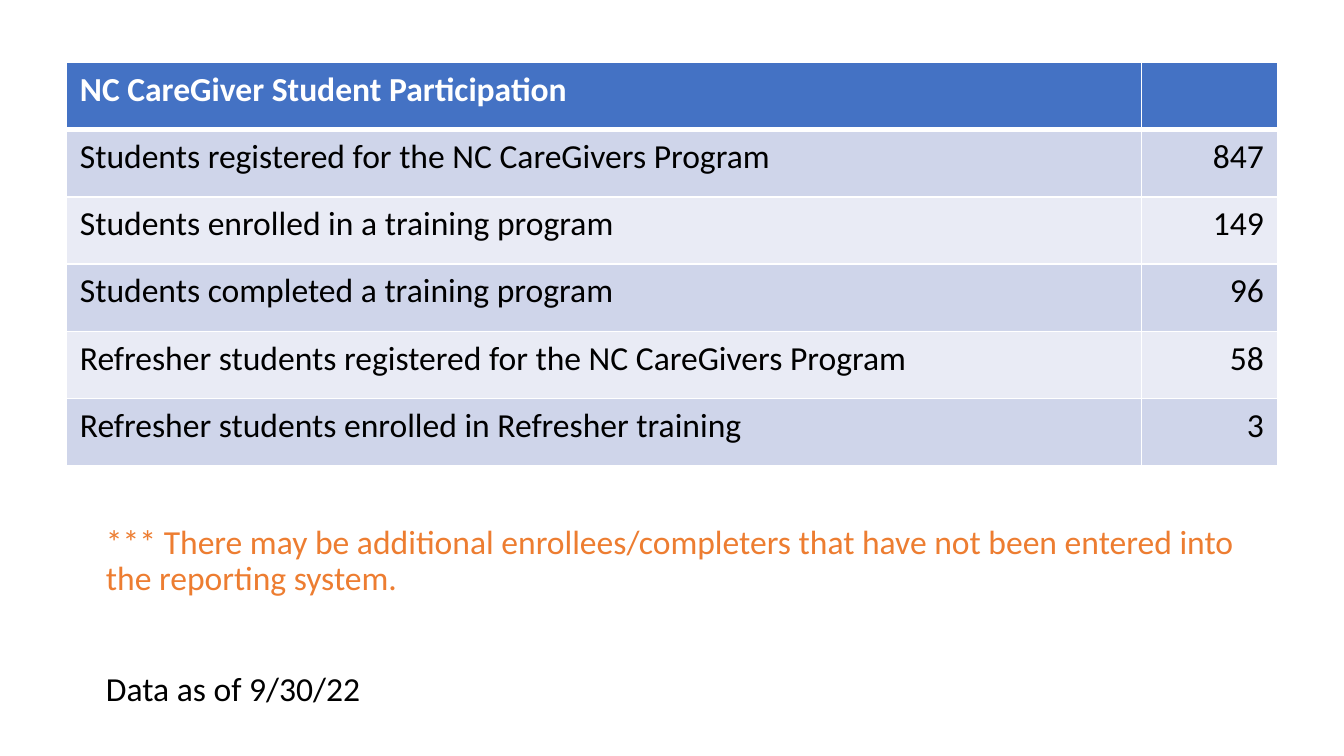
import pptx
import pptx.dml.color
import pptx.enum.text
import pptx.oxml
import pptx.oxml.ns
import pptx.util

Pt = pptx.util.Pt
RGB = pptx.dml.color.RGBColor.from_string
ALIGN = pptx.enum.text.PP_ALIGN

COLORS = {
    "header": "4472C4",
    "band_dark": "CFD5EA",
    "band_light": "E9EBF5",
    "white": "FFFFFF",
    "black": "000000",
    "note": "ED7D31",
}


def write(p, text, color, bold=False):
    r = p.add_run()
    r.text = text
    for name, value in {"name": "Calibri", "size": Pt(18), "bold": bold}.items():
        setattr(r.font, name, value)
    r.font.color.rgb = RGB(COLORS[color])


def add_border(cell, side, width):
    ns = pptx.oxml.ns.nsdecls("a")
    cell._tc.get_or_add_tcPr().append(pptx.oxml.parse_xml(
        f'<a:ln{side} {ns} w="{Pt(width)}"><a:solidFill>'
        f'<a:srgbClr val="{COLORS["white"]}"/></a:solidFill></a:ln{side}>'))


prs = pptx.Presentation()
prs.slide_width, prs.slide_height = Pt(720), Pt(405)
s = prs.slides.add_slide(prs.slide_layouts[6])

# Participation table
rows = [
    ("NC CareGiver Student Participation", ""),
    ("Students registered for the NC CareGivers Program", "847"),
    ("Students enrolled in a training program", "149"),
    ("Students completed a training program", "96"),
    ("Refresher students registered for the NC CareGivers Program", "58"),
    ("Refresher students enrolled in Refresher training", "3"),
]
widths = [576, 72.7]
row_height = 36
table = s.shapes.add_table(len(rows), len(widths), Pt(35.6), Pt(33.5),
                           Pt(sum(widths)), Pt(row_height * len(rows))).table
for column, width in zip(table.columns, widths):
    column.width = Pt(width)

for i, row in enumerate(rows):
    table.rows[i].height = Pt(row_height)
    fill = "header" if i == 0 else "band_dark" if i % 2 else "band_light"
    for j, text in enumerate(row):
        cell = table.cell(i, j)
        for side in "LRTB":
            header_rule = (i, side) in [(0, "B"), (1, "T")]
            add_border(cell, side, 3 if header_rule else 1)
        cell.fill.solid()
        cell.fill.fore_color.rgb = RGB(COLORS[fill])
        p = cell.text_frame.paragraphs[0]
        p.alignment = ALIGN.RIGHT if j else ALIGN.LEFT
        if text:
            write(p, text, "black" if i else "white", bold=i == 0)

# Note and date
notes = [
    ("*** There may be additional enrollees/completers that have not been "
     "entered into the reporting system.", "note", 0),
    ("Data as of 9/30/22", "black", 40),
]
tf = s.shapes.add_textbox(Pt(49.7), Pt(277.9), Pt(620.6), Pt(108.7)).text_frame
tf.word_wrap = True
for i, (text, color, gap) in enumerate(notes):
    p = tf.add_paragraph() if i else tf.paragraphs[0]
    for name, value in {"line_spacing": 0.9, "space_before": Pt(gap)}.items():
        setattr(p, name, value)
    write(p, text, color)

prs.save("out.pptx")
